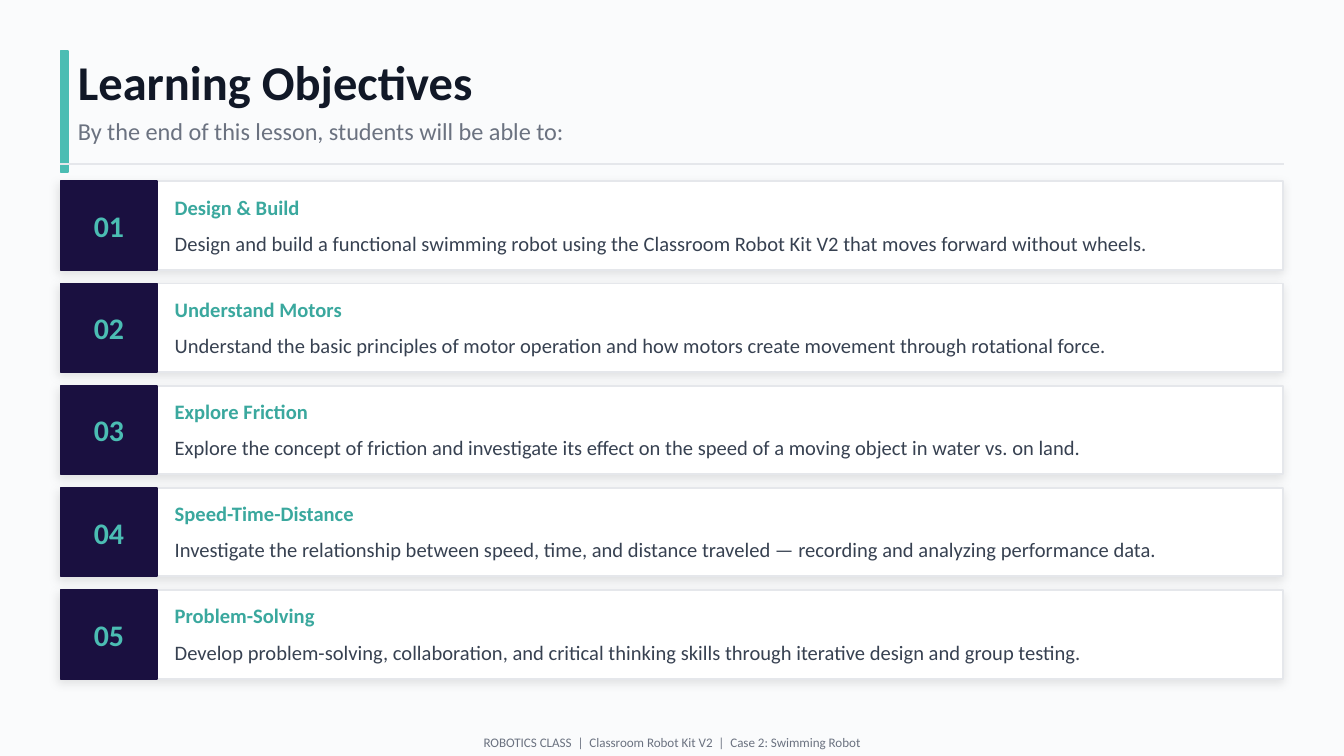
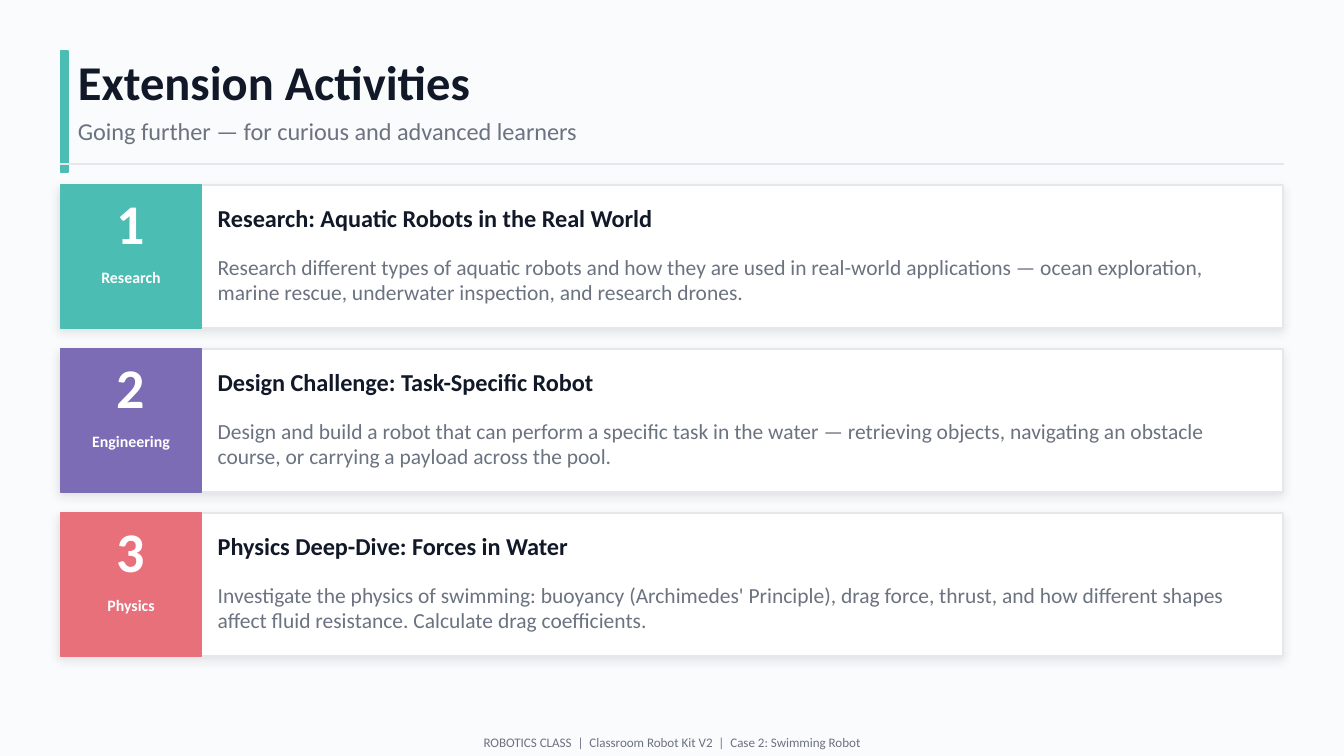
from lxml.etree import SubElement as Sub
from pptx import Presentation
from pptx.dml.color import RGBColor as RGB
from pptx.enum.shapes import MSO_CONNECTOR as Conn, MSO_SHAPE as Form
from pptx.enum.text import MSO_ANCHOR as Anchor, PP_ALIGN as Align
from pptx.oxml.ns import qn
from pptx.util import Pt

# Colours and shared measures, in points
PAPER = RGB(0xFA, 0xFB, 0xFC)
WHITE = RGB(0xFF, 0xFF, 0xFF)
RULE = RGB(0xE5, 0xE7, 0xEB)
INK = RGB(0x11, 0x18, 0x27)
SLATE = RGB(0x37, 0x41, 0x51)
GREY = RGB(0x6B, 0x72, 0x80)
NAVY = RGB(0x1A, 0x10, 0x40)
TEAL = RGB(0x4B, 0xBD, 0xB3)
DEEP = RGB(0x3A, 0xA8, 0x9E)
PURPLE = RGB(0x7B, 0x6C, 0xB5)
CORAL = RGB(0xE8, 0x70, 0x7A)
FONT = "Calibri"
WIDE, HIGH = 720, 405
LEFT, SPAN = 32.4, 655.2
FOOT = "ROBOTICS CLASS  |  Classroom Robot Kit V2  |  Case 2: Swimming Robot"


def block(slide, x, y, w, h, fill, line, shade=False):
    shape = slide.shapes.add_shape(Form.RECTANGLE, Pt(x), Pt(y), Pt(w), Pt(h))
    shape.fill.solid()
    shape.fill.fore_color.rgb = fill
    shape.line.color.rgb = line
    shape.line.width = Pt(1)
    shape.shadow.inherit = False
    if shade:
        effect = shape._element.spPr.find(qn("a:effectLst"))
        outer = Sub(effect, qn("a:outerShdw"), blurRad=str(Pt(5)), dist=str(Pt(2)),
                    dir=str(135 * 60000), algn="bl", rotWithShape="0")
        color = Sub(outer, qn("a:srgbClr"), val="000000")
        Sub(color, qn("a:alpha"), val="10000")


def write(slide, x, y, w, h, text, size, color, bold=False, align=Align.LEFT,
          anchor=Anchor.MIDDLE, inset=0):
    frame = slide.shapes.add_textbox(Pt(x), Pt(y), Pt(w), Pt(h)).text_frame
    frame.word_wrap = True
    frame.vertical_anchor = anchor
    frame.margin_left = frame.margin_right = Pt(inset)
    frame.margin_top = frame.margin_bottom = Pt(inset)
    frame.text = text
    para = frame.paragraphs[0]
    para.alignment = align
    font = para.runs[0].font
    font.name, font.size, font.bold = FONT, Pt(size), bold
    font.color.rgb = color


deck = Presentation()
deck.slide_width, deck.slide_height = Pt(WIDE), Pt(HIGH)

# Shared heading, rule and background
heads = [
    ("Learning Objectives", "By the end of this lesson, students will be able to:"),
    ("Extension Activities", "Going further — for curious and advanced learners"),
]
for title, lead in heads:
    slide = deck.slides.add_slide(deck.slide_layouts[6])
    slide.background.fill.solid()
    slide.background.fill.fore_color.rgb = PAPER
    block(slide, LEFT, 27.36, 4.32, 64.8, TEAL, TEAL)
    write(slide, 41.76, 25.2, 612, 36, title, 26, INK, True)
    write(slide, 41.76, 59.04, 612, 21.6, lead, 13, GREY)
    rule = slide.shapes.add_connector(
        Conn.STRAIGHT, Pt(LEFT), Pt(87.84), Pt(LEFT + SPAN), Pt(87.84))
    rule.line.color.rgb = RULE
    rule.line.width = Pt(1)
    Sub(rule._element.spPr, qn("a:effectLst"))
goals, extras = deck.slides

# Learning objectives: five numbered rows
rows = [
    ("Design & Build", "Design and build a functional swimming robot using the "
     "Classroom Robot Kit V2 that moves forward without wheels."),
    ("Understand Motors", "Understand the basic principles of motor operation and "
     "how motors create movement through rotational force."),
    ("Explore Friction", "Explore the concept of friction and investigate its effect "
     "on the speed of a moving object in water vs. on land."),
    ("Speed-Time-Distance", "Investigate the relationship between speed, time, and "
     "distance traveled — recording and analyzing performance data."),
    ("Problem-Solving", "Develop problem-solving, collaboration, and critical "
     "thinking skills through iterative design and group testing."),
]
tall, tab = 47.52, 51.84
for i, (name, text) in enumerate(rows):
    y = 97.2 + i * 54.72
    block(goals, LEFT, y, SPAN, tall, WHITE, RULE, True)
    block(goals, LEFT, y, tab, tall, NAVY, NAVY)
    write(goals, LEFT, y, tab, tall, f"{i + 1:02}", 16, TEAL, True, Align.CENTER)
    write(goals, 93.6, y + 5.76, 108, 15.84, name, 11, DEEP, True)
    write(goals, 93.6, y + 23.04, 576, 20.16, text, 11, SLATE)

# Extension activities: three cards with coloured tabs
cards = [
    (TEAL, "Research", "Research: Aquatic Robots in the Real World",
     "Research different types of aquatic robots and how they are used in real-world "
     "applications — ocean exploration, marine rescue, underwater inspection, and "
     "research drones."),
    (PURPLE, "Engineering", "Design Challenge: Task-Specific Robot",
     "Design and build a robot that can perform a specific task in the water — "
     "retrieving objects, navigating an obstacle course, or carrying a payload "
     "across the pool."),
    (CORAL, "Physics", "Physics Deep-Dive: Forces in Water",
     "Investigate the physics of swimming: buoyancy (Archimedes' Principle), drag "
     "force, thrust, and how different shapes affect fluid resistance. Calculate "
     "drag coefficients."),
]
tall, tab = 76.32, 75.6
for i, (color, kind, name, text) in enumerate(cards):
    y = 99.36 + i * 87.84
    block(extras, LEFT, y, SPAN, tall, WHITE, RULE, True)
    block(extras, LEFT, y, tab, tall, color, color)
    write(extras, LEFT, y, tab, 39.6, str(i + 1), 30, WHITE, True, Align.CENTER)
    write(extras, LEFT, y + 41.76, tab, 31.68, kind, 8.5, WHITE, True,
          Align.CENTER, Anchor.TOP, 2.16)
    write(extras, 116.64, y + 7.2, 554.4, 20.16, name, 13, INK, True)
    write(extras, 116.64, y + 30.24, 554.4, 40.32, text, 11.5, GREY)

# Footer
for slide in deck.slides:
    write(slide, 0, 390.24, WIDE, 14.4, FOOT, 7, GREY, align=Align.CENTER)

deck.save("out.pptx")
